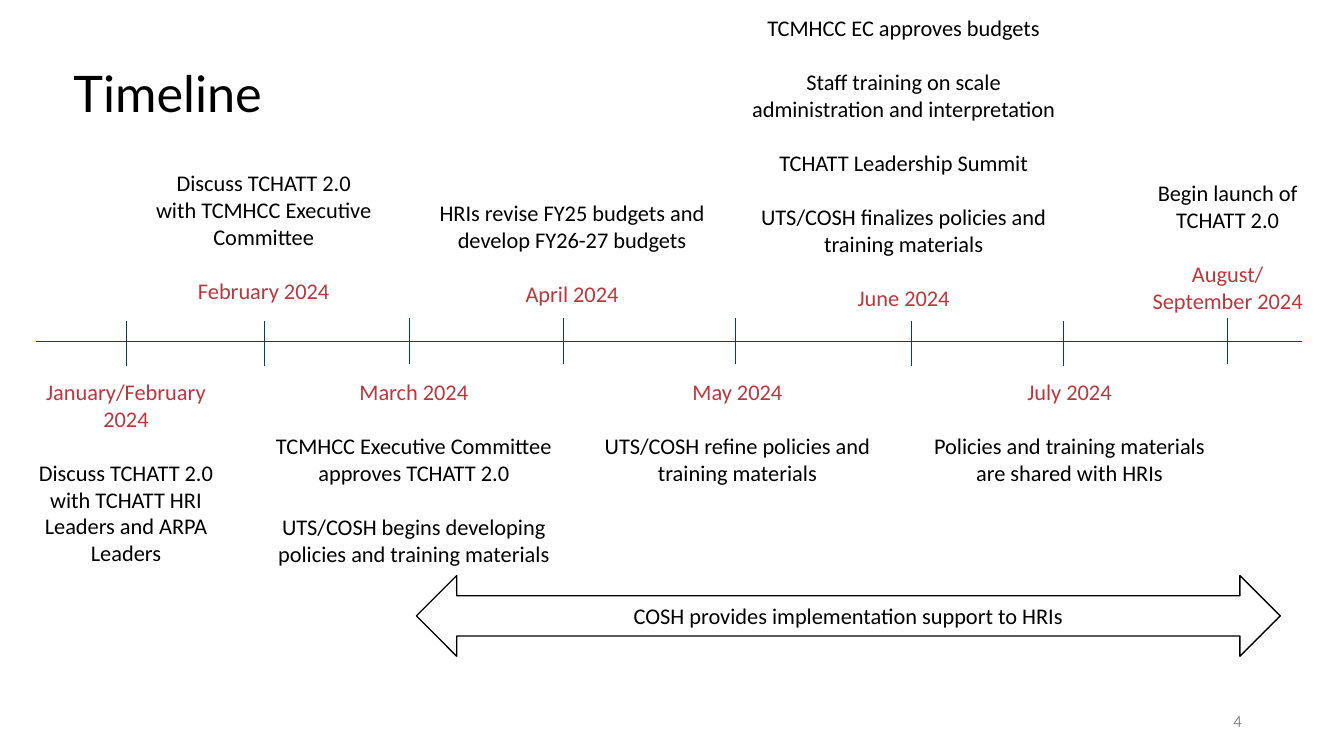
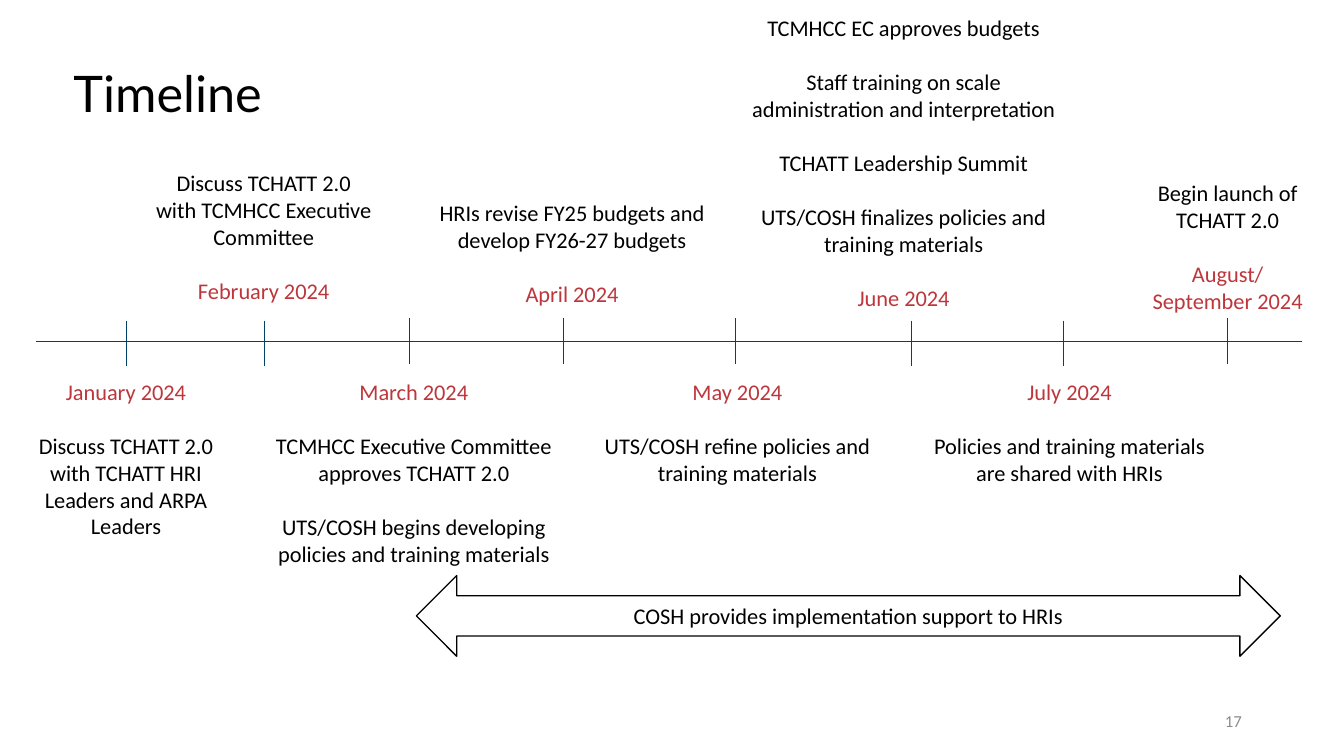
from dataclasses import dataclass, replace

from pptx import Presentation
from pptx.dml.color import RGBColor
from pptx.enum.shapes import MSO_CONNECTOR, MSO_SHAPE
from pptx.enum.text import MSO_ANCHOR as Anchor, MSO_AUTO_SIZE as AutoSize, PP_ALIGN as Align
from pptx.oxml.ns import qn
from pptx.util import Inches, Pt
from lxml.etree import SubElement

WIDTH, HEIGHT = Inches(13.333), Inches(7.5)
BLACK, RED, NAVY, GRAY = "000000", "BD363C", "01426A", "8C8C8C"
TITLE_FONT, BODY_FONT = "Lato", "Calibri"
TEXT_SIZE, GROUP_GAP = 16, 19.5

AXIS_Y, AXIS_LEFT, AXIS_RIGHT = 45.2, 2.7, 96.9
TICK_HIGH, TICK_LOW, TICK_HEIGHT = 42.13, 42.4, 6
BELOW = 49.33
ROW_HEIGHT, BOX_PADDING = 3.6, 1.33


@dataclass(frozen=True)
class Milestone:
    tick: float
    tick_top: float
    left: float
    top: float
    width: float
    rows: int
    date: str
    notes: tuple[str, ...]

    @property
    def groups(self) -> list[tuple[str, str]]:
        notes = [(note, BLACK) for note in self.notes]
        date = [(self.date, RED)]
        return notes + date if self.top < AXIS_Y else date + notes


MILESTONES = [
    Milestone(9.38, TICK_LOW, 2.1, BELOW, 14.55, 7, "January/February 2024",
              ("Discuss TCHATT 2.0 with TCHATT HRI Leaders and ARPA Leaders",)),
    Milestone(19.65, TICK_LOW, 9.08, 21.73, 21.08, 5, "February 2024",
              ("Discuss TCHATT 2.0\nwith TCMHCC Executive Committee",)),
    Milestone(30.45, TICK_HIGH, 19.65, BELOW, 22.28, 7, "March 2024",
              ("TCMHCC Executive Committee approves TCHATT 2.0",
               "UTS/COSH begins developing policies and training materials")),
    Milestone(41.93, TICK_HIGH, 30.45, 25.73, 24.23, 4, "April 2024",
              ("HRIs revise FY25 budgets and develop FY26-27 budgets",)),
    Milestone(54.75, TICK_HIGH, 41.93, BELOW, 25.88, 4, "May 2024",
              ("UTS/COSH refine policies and training materials",)),
    Milestone(67.8, TICK_LOW, 55.05, 1.2, 24.38, 11, "June 2024",
              ("TCMHCC EC approves budgets",
               "Staff training on scale administration and interpretation",
               "TCHATT Leadership Summit",
               "UTS/COSH finalizes policies and training materials")),
    Milestone(79.13, TICK_LOW, 67.8, BELOW, 23.55, 4, "July 2024",
              ("Policies and training materials are shared with HRIs",)),
    Milestone(91.35, TICK_HIGH, 84.75, 23.07, 13.2, 5, "August/\nSeptember 2024",
              ("Begin launch of\nTCHATT 2.0",)),
]


def rgb(color: str) -> RGBColor:
    return RGBColor.from_string(color)


def x(percent: float) -> int:
    return round(WIDTH * percent / 100)


def y(percent: float) -> int:
    return round(HEIGHT * percent / 100)


def area(left: float, top: float, width: float, height: float) -> tuple[int, int, int, int]:
    return x(left), y(top), x(width), y(height)


def style(p, size: float, color: str, align: Align, font: str = BODY_FONT) -> None:
    p.alignment = align
    p.font.name = font
    p.font.size = Pt(size)
    p.font.color.rgb = rgb(color)


def add_title(s, text: str) -> None:
    title = s.shapes.title
    title.left, title.top, title.width, title.height = area(4.72, 6.4, 90.6, 12.53)
    tf = title.text_frame
    tf.text = text
    tf.auto_size = AutoSize.NONE
    tf.vertical_anchor = Anchor.MIDDLE
    p = tf.paragraphs[0]
    p.line_spacing = 0.9
    style(p, 36, BLACK, Align.LEFT, TITLE_FONT)


def add_number(s, number: int) -> None:
    tf = s.shapes.add_textbox(*area(70.65, 92.67, 22.5, 5.33)).text_frame
    tf.word_wrap = True
    tf.vertical_anchor = Anchor.MIDDLE
    tf.text = str(number)
    style(tf.paragraphs[0], 12, GRAY, Align.RIGHT)


def add_line(s, x1: float, y1: float, x2: float, y2: float) -> None:
    line = s.shapes.add_connector(MSO_CONNECTOR.STRAIGHT, x(x1), y(y1), x(x2), y(y2))
    line.line.color.rgb = rgb(NAVY)
    line.line.width = Pt(0.5)
    SubElement(line._element.spPr, qn("a:effectLst"))


def add_milestone(s, m: Milestone) -> None:
    add_line(s, m.tick, m.tick_top, m.tick, m.tick_top + TICK_HEIGHT)
    height = BOX_PADDING + ROW_HEIGHT * m.rows
    tf = s.shapes.add_textbox(*area(m.left, m.top, m.width, height)).text_frame
    tf.word_wrap = True
    tf.auto_size = AutoSize.SHAPE_TO_FIT_TEXT
    tf.text = "\n".join(text for text, _ in m.groups)
    paragraphs = iter(tf.paragraphs)
    for group, (text, color) in enumerate(m.groups):
        for row, _ in enumerate(text.split("\n")):
            p = next(paragraphs)
            style(p, TEXT_SIZE, color, Align.CENTER)
            if group and row == 0:
                p.space_before = Pt(GROUP_GAP)


def add_support_arrow(s, text: str) -> None:
    sp = s.shapes.add_shape(MSO_SHAPE.LEFT_RIGHT_ARROW, *area(30.98, 76.13, 64.28, 10.67))
    sp.shadow.inherit = False
    sp.fill.background()
    sp.line.color.rgb = rgb(BLACK)
    sp.line.width = Pt(1)
    tf = sp.text_frame
    tf.vertical_anchor = Anchor.MIDDLE
    tf.text = text
    style(tf.paragraphs[0], TEXT_SIZE, BLACK, Align.CENTER)


def add_timeline(prs, number: int, milestones: list[Milestone]) -> None:
    s = prs.slides.add_slide(prs.slide_layouts[5])
    add_title(s, "Timeline")
    add_number(s, number)
    add_line(s, AXIS_LEFT, AXIS_Y, AXIS_RIGHT, AXIS_Y)
    for m in milestones:
        add_milestone(s, m)
    add_support_arrow(s, "COSH provides implementation support to HRIs")


def main() -> None:
    prs = Presentation()
    prs.slide_width, prs.slide_height = WIDTH, HEIGHT
    january = replace(MILESTONES[0], date="January 2024", rows=6)
    add_timeline(prs, 4, MILESTONES)
    add_timeline(prs, 17, [january, *MILESTONES[1:]])
    prs.save("out.pptx")


if __name__ == "__main__":
    main()
